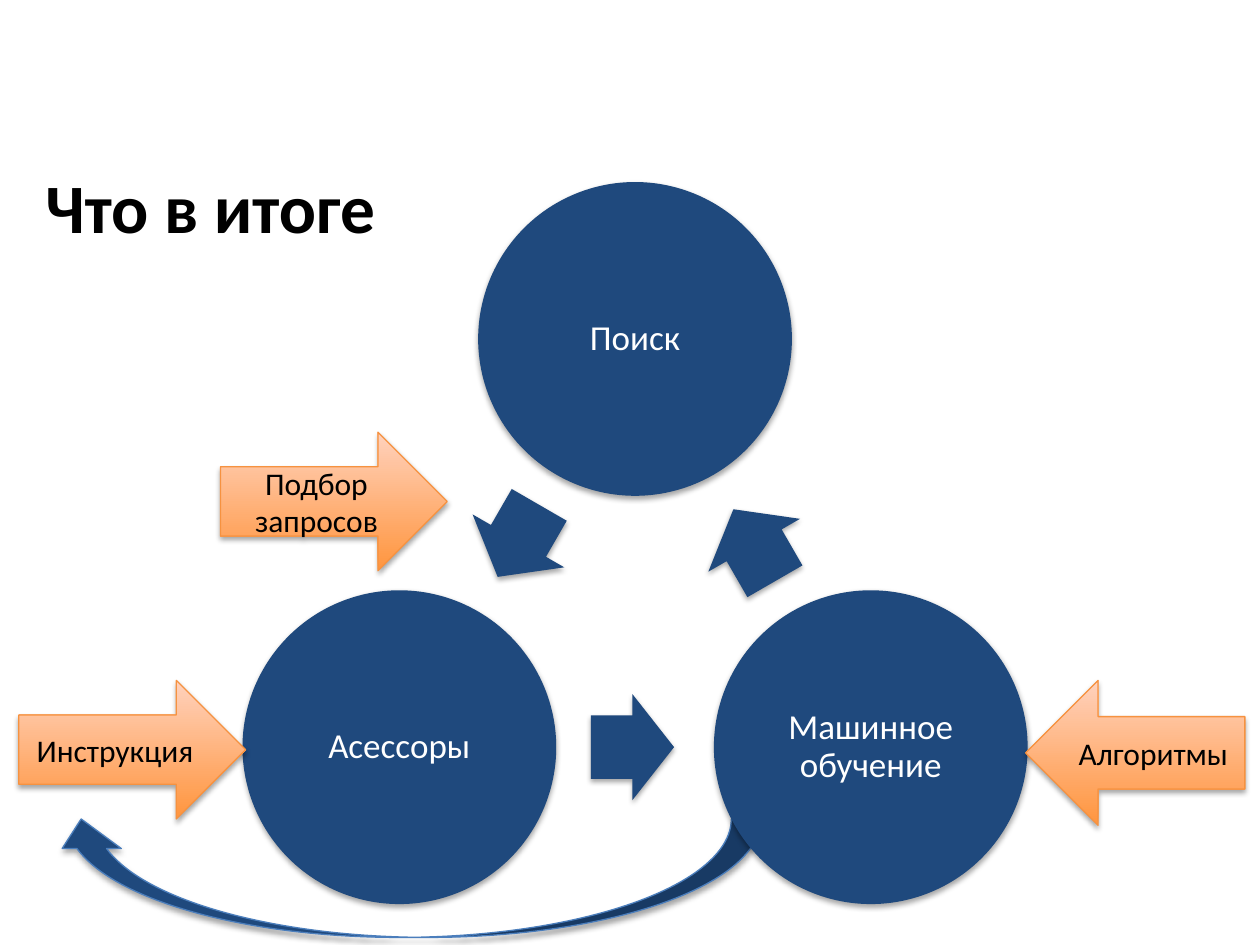
import math

import pptx
import pptx.dml.color
import pptx.enum.shapes
import pptx.enum.text
import pptx.oxml
import pptx.oxml.ns
import pptx.util

Inches = pptx.util.Inches
Pt = pptx.util.Pt
KIND = pptx.enum.shapes.MSO_SHAPE
ALIGN = pptx.enum.text.PP_ALIGN
MIDDLE = pptx.enum.text.MSO_ANCHOR.MIDDLE

COLORS = {
    "navy": "1F497D", "edge": "4B7EBC", "deep": "FF953E", "pale": "FFD2BD",
    "rim": "F69240", "black": "000000", "white": "FFFFFF",
}
SHADOW = (
    '<a:outerShdw %s blurRad="%d" dist="%d" dir="5400000" rotWithShape="0">'
    '<a:srgbClr val="%s"><a:alpha val="35000"/></a:srgbClr></a:outerShdw>'
    % (pptx.oxml.ns.nsdecls("a"), Pt(3.1), Pt(1.8), COLORS["black"])
)


def shade(name):
    return pptx.dml.color.RGBColor.from_string(COLORS[name])


class Deck:
    """Holds the style and the current slide."""

    font = "Calibri"

    def __init__(self):
        self.file = pptx.Presentation()
        self.file.slide_width = Inches(10)
        self.file.slide_height = Inches(7.5)
        self.slide = self.file.slides.add_slide(self.file.slide_layouts[5])

    def label(self, shape, text, size, color, align, bold=False):
        frame = shape.text_frame
        frame.word_wrap = True
        frame.vertical_anchor = MIDDLE
        para = frame.paragraphs[0]
        para.alignment = align
        run = para.add_run()
        run.text = text
        run.font.name = self.font
        run.font.size = Pt(size)
        run.font.bold = bold
        run.font.color.rgb = shade(color)
        return para

    def title(self, text, left, top, width, height):
        head = self.slide.shapes.title
        head.left, head.top = Inches(left), Inches(top)
        head.width, head.height = Inches(width), Inches(height)
        self.label(head, text, 39.6, "black", ALIGN.LEFT, True)

    def shape(self, kind, left, top, width, height, line=None):
        """Add a navy shape with a soft shadow."""
        item = self.slide.shapes.add_shape(
            kind, Inches(left), Inches(top), Inches(width), Inches(height))
        item.fill.solid()
        item.fill.fore_color.rgb = shade("navy")
        if line:
            item.line.color.rgb = shade(line)
            item.line.width = Pt(0.75)
        else:
            item.line.fill.background()
        item.shadow.inherit = False
        effects = item.element.spPr.find(pptx.oxml.ns.qn("a:effectLst"))
        effects.append(pptx.oxml.parse_xml(SHADOW))
        return item

    def stage(self, text, x, y, size):
        """Add a circle centred on x, y."""
        disc = self.shape(KIND.OVAL, x - size / 2, y - size / 2, size, size)
        frame = disc.text_frame
        frame.margin_left = frame.margin_right = Inches(0.03)
        frame.margin_top = frame.margin_bottom = Inches(0.03)
        para = self.label(disc, text, 20, "white", ALIGN.CENTER)
        para.line_spacing = 0.9

    def step(self, x, y, angle):
        """Add a turned arrow centred on x, y."""
        width, height = 0.66, 0.84
        arrow = self.shape(KIND.RIGHT_ARROW, x - width / 2, y - height / 2,
                           width, height)
        arrow.adjustments[0] = 0.6
        arrow.adjustments[1] = 0.5
        arrow.rotation = angle

    def input(self, text, kind, left, top, width, height):
        """Add an orange arrow with a label."""
        arrow = self.shape(kind, left, top, width, height, "rim")
        arrow.fill.gradient()
        arrow.fill.gradient_angle = 90
        for stop, name in zip(arrow.fill.gradient_stops, ("deep", "pale")):
            stop.color.rgb = shade(name)
        self.label(arrow, text, 18, "black", ALIGN.CENTER)

    def loop(self, left, top, width, height):
        """Add the curved arrow that runs back to the left."""
        arrow = self.shape(KIND.CURVED_UP_ARROW, left, top, width, height,
                           "edge")
        arrow.element.spPr.get_or_add_xfrm().set("flipH", "1")

    def cycle(self, names, x, y, radius, size):
        """Set circles on a ring, anticlockwise from the top, with arrows."""
        turn = 2 * math.pi / len(names)
        spots = [(x - radius * math.sin(i * turn),
                  y - radius * math.cos(i * turn)) for i in range(len(names))]
        for i, (name, start) in enumerate(zip(names, spots)):
            end = spots[(i + 1) % len(spots)]
            self.stage(name, *start, size)
            way = math.atan2(end[1] - start[1], end[0] - start[0])
            back = 0.02
            self.step((start[0] + end[0]) / 2 - back * math.cos(way),
                      (start[1] + end[1]) / 2 - back * math.sin(way),
                      round(math.degrees(way)) % 360)


def main():
    deck = Deck()
    deck.loop(0.41, 6.5, 5.63, 0.94)
    deck.title("Что в итоге", 0.26, 1.26, 9.48, 0.74)
    deck.cycle(["Поиск", "Асессоры", "Машинное обучение"],
               5.04, 4.85, 2.16, 2.49)
    deck.input("Инструкция", KIND.RIGHT_ARROW, 0.15, 5.4, 1.8, 1.1)
    deck.input("Алгоритмы", KIND.LEFT_ARROW, 8.14, 5.4, 1.74, 1.15)
    deck.input("Подбор запросов", KIND.RIGHT_ARROW, 1.75, 3.43, 1.8, 1.1)
    deck.file.save("out.pptx")


if __name__ == "__main__":
    main()
